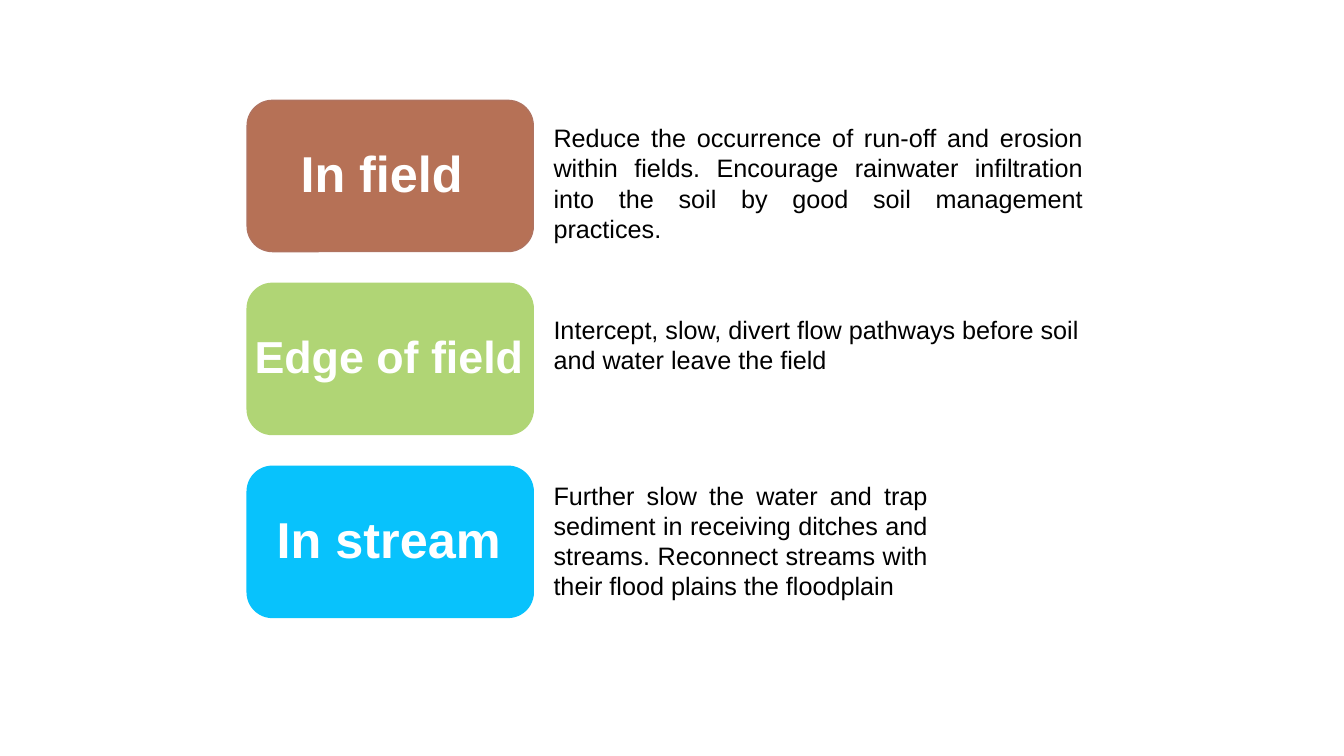
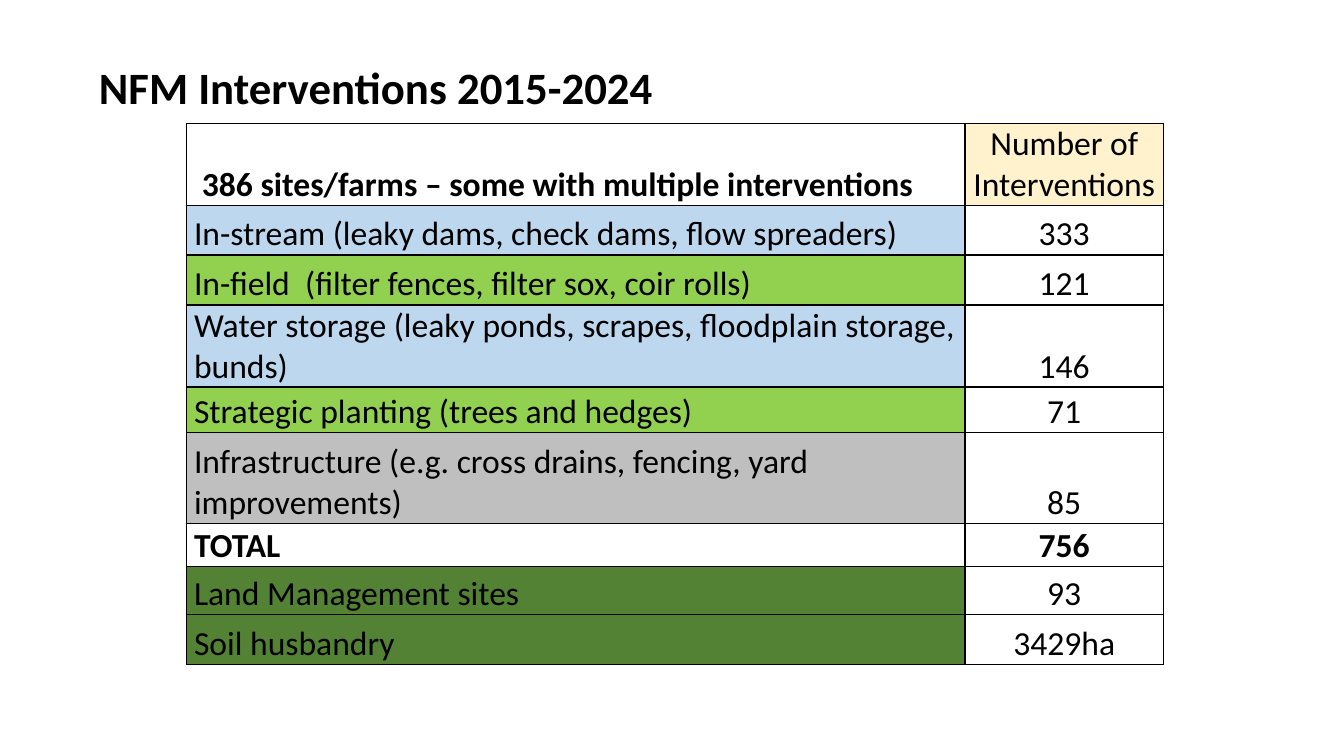
from lxml.etree import SubElement
from pptx import Presentation
from pptx.dml.color import RGBColor
from pptx.enum.shapes import MSO_SHAPE
from pptx.enum.text import MSO_ANCHOR, MSO_AUTO_SIZE, PP_ALIGN
from pptx.oxml.ns import qn
from pptx.util import Cm, Pt

BLACK, WHITE = "000000", "FFFFFF"
BLUE, GREEN, DARK, GREY, CREAM = "BDD7EE", "92D050", "548235", "BFBFBF", "FFF2CC"
LEFT, MID, JUST = PP_ALIGN.LEFT, PP_ALIGN.CENTER, PP_ALIGN.JUSTIFY
SIDES = ("a:lnL", "a:lnR", "a:lnT", "a:lnB")

ZONES = [
    ("In field", 36, 1.16, "B67156", "B07360", 2.96, 13.84, JUST,
     "Reduce the occurrence of run-off and erosion within fields. Encourage "
     "rainwater infiltration into the soil by good soil management practices."),
    ("Edge of field", 32, 0, "B0D575", "B0D575", 7.8, 13.84, LEFT,
     "Intercept, slow, divert flow pathways before soil and water leave the field"),
    ("In stream", 36, 0.56, "08C2FC", "08C2FC", 11.97, 9.93, JUST,
     "Further slow the water and trap sediment in receiving ditches and streams. "
     "Reconnect streams with their flood plains the floodplain"),
]
ROWS = [
    ("386 sites/farms – some with multiple interventions",
     "Number of Interventions", None, 1.73),
    ("In-stream (leaky dams, check dams, flow spreaders)", "333", BLUE, 1.25),
    ("In-field  (filter fences, filter sox, coir rolls)", "121", GREEN, 1.26),
    ("Water storage (leaky ponds, scrapes, floodplain storage, bunds)",
     "146", BLUE, 1.9),
    ("Strategic planting (trees and hedges)", "71", GREEN, 1.15),
    ("Infrastructure (e.g. cross drains, fencing, yard improvements)",
     "85", GREY, 2.28),
    ("TOTAL", "756", WHITE, 1.1),
    ("Land Management sites", "93", DARK, 1.2),
    ("Soil husbandry", "3429ha", DARK, 1.26),
]
WIDTHS = (19.61, 5, 0.5)


def color(code):
    return RGBColor.from_string(code)


def write(frame, text, face, size, code=BLACK, bold=False, align=LEFT):
    frame.word_wrap = True
    para = frame.paragraphs[0]
    para.text = text
    para.alignment = align
    font = para.font
    font.name, font.size, font.bold = face, Pt(size), bold
    font.color.rgb = color(code)
    return para


def add_label(slide, top, text, size, inset, fill, edge):
    box = slide.shapes.add_shape(
        MSO_SHAPE.ROUNDED_RECTANGLE, Cm(6.23), Cm(top), Cm(7.21), Cm(3.81))
    box.shadow.inherit = False
    box.fill.solid()
    box.fill.fore_color.rgb = color(fill)
    box.line.color.rgb = color(edge)
    box.line.width = Pt(1)
    frame = box.text_frame
    frame.vertical_anchor = MSO_ANCHOR.MIDDLE
    frame.margin_left, frame.margin_right = Cm(inset), 0
    frame.margin_bottom = Cm(0.3)
    write(frame, text, "Arial", size, WHITE, True)


def add_note(slide, top, width, align, text):
    box = slide.shapes.add_textbox(Cm(13.7), Cm(top), Cm(width), Cm(1.8))
    box.text_frame.auto_size = MSO_AUTO_SIZE.SHAPE_TO_FIT_TEXT
    write(box.text_frame, text, "Arial", 18, align=align)


def add_title(slide, text):
    title = slide.shapes.title
    title.left, title.top = Cm(2.24), Cm(0)
    title.width, title.height = Cm(25.4), Cm(4.55)
    frame = title.text_frame
    frame.auto_size = MSO_AUTO_SIZE.NONE
    frame.vertical_anchor = MSO_ANCHOR.MIDDLE
    write(frame, text, "Calibri", 32, bold=True).line_spacing = 0.9


def add_edges(cell, drawn):
    props = cell._tc.get_or_add_tcPr()
    for side in SIDES:
        line = SubElement(props, qn(side), w=str(Pt(1)))
        if side in drawn:
            fill = SubElement(line, qn("a:solidFill"))
            SubElement(fill, qn("a:srgbClr"), val=BLACK)
        else:
            SubElement(line, qn("a:noFill"))


def style_cell(cell, fill=None, drawn=SIDES):
    add_edges(cell, drawn)
    if fill:
        cell.fill.solid()
        cell.fill.fore_color.rgb = color(fill)
    else:
        cell.fill.background()
    cell.vertical_anchor = MSO_ANCHOR.BOTTOM
    cell.margin_left = cell.margin_right = Cm(0.18)
    cell.margin_top = cell.margin_bottom = 0


def fill_cell(cell, text, fill, bold, align):
    style_cell(cell, fill)
    write(cell.text_frame, text, "Calibri", 24, bold=bold, align=align)


def add_grid(slide):
    tall = sum(row[-1] for row in ROWS)
    grid = slide.shapes.add_table(
        len(ROWS), len(WIDTHS), Cm(4.71), Cm(3.11), Cm(sum(WIDTHS)), Cm(tall)).table
    for column, wide in zip(grid.columns, WIDTHS):
        column.width = Cm(wide)
    for i, (name, count, fill, high) in enumerate(ROWS):
        grid.rows[i].height = Cm(high)
        total = name == "TOTAL"
        fill_cell(grid.cell(i, 0), name, fill, total or i == 0, LEFT)
        shade = CREAM if i == 0 else WHITE if total else None
        fill_cell(grid.cell(i, 1), count, shade, total, MID)
        style_cell(grid.cell(i, 2), drawn=SIDES[:1])
    grid.cell(0, 0).margin_left = Cm(0.38)


def main():
    deck = Presentation()
    deck.slide_width, deck.slide_height = Cm(33.87), Cm(19.05)

    slide = deck.slides.add_slide(deck.slide_layouts[6])
    for i, zone in enumerate(ZONES):
        name, size, inset, fill, edge, top, width, align, text = zone
        add_label(slide, 2.53 + i * 4.61, name, size, inset, fill, edge)
        add_note(slide, top, width, align, text)

    slide = deck.slides.add_slide(deck.slide_layouts[5])
    add_title(slide, "NFM Interventions 2015-2024")
    add_grid(slide)

    deck.save("out.pptx")


if __name__ == "__main__":
    main()
